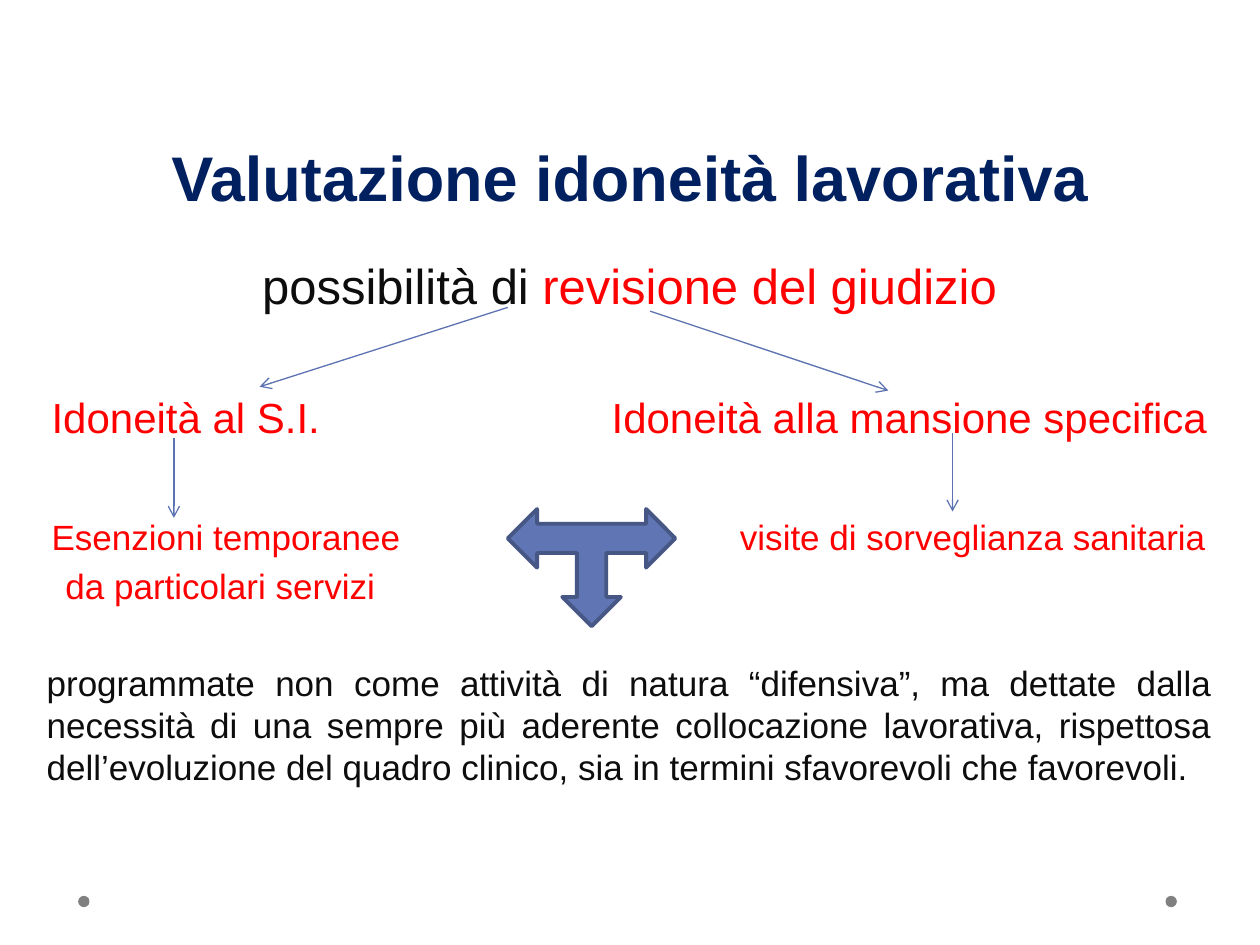
from pptx import Presentation, util as u
from pptx.dml.color import RGBColor
from pptx.enum import shapes, text
from pptx.oxml.ns import qn
from lxml import etree

NAVY = RGBColor(0x00, 0x20, 0x60)
RED = RGBColor(0xFF, 0x00, 0x00)
INK = RGBColor(0x0D, 0x0D, 0x0D)
GRAY = RGBColor(0x80, 0x80, 0x80)
BLUE = RGBColor(0x60, 0x76, 0xB4)
LINE = RGBColor(0x5C, 0x72, 0xB2)
EDGE = RGBColor(0x47, 0x57, 0x85)
ALIGN = text.PP_ALIGN

deck = Presentation()
deck.slide_width, deck.slide_height = u.Inches(10), u.Inches(7.5)
slide = deck.slides.add_slide(deck.slide_layouts[5])
items = slide.shapes


def grid(*vals):
    """Turn grid steps into lengths: 100 columns by 75 rows."""
    return [round(val * deck.slide_width / 100) for val in vals]


def write(box, paras, size, align=ALIGN.LEFT, bold=False, pitch=None,
          inset=0, indent=0, anchor=text.MSO_ANCHOR.TOP):
    """Fill a box; each paragraph is a list of (words, color) runs.

    The indent applies to every paragraph after the first.
    """
    frame = box.text_frame
    frame.word_wrap = True
    frame.auto_size = text.MSO_AUTO_SIZE.NONE
    frame.vertical_anchor = anchor
    frame.margin_left = frame.margin_right = inset
    frame.margin_top = frame.margin_bottom = inset
    for i, runs in enumerate(paras):
        para = frame.add_paragraph() if i else frame.paragraphs[0]
        para.alignment = align
        if pitch:
            para.line_spacing = u.Pt(pitch)
        if i:
            para.space_before = u.Pt(4)
            para._p.get_or_add_pPr().set("marL", str(indent))
        for words, color in runs:
            run = para.add_run()
            run.text = words
            font = run.font
            font.name, font.size, font.bold = "Arial", u.Pt(size), bold
            font.color.rgb = color


# Title
title = items.title
title.left, title.top, title.width, title.height = grid(5, 5.2, 90, 12.3)
write(title, [[("Valutazione idoneità lavorativa", NAVY)]], 36, ALIGN.CENTER,
      bold=True, pitch=58, inset=u.Inches(0.05), anchor=text.MSO_ANCHOR.BOTTOM)

# Text blocks: place on the grid, paragraphs, format
blocks = [
    ((3.7, 20.3, 92.5, 4.6),
     [[("possibilità di ", INK), ("revisione del giudizio", RED)]],
     dict(size=28, align=ALIGN.CENTER)),
    ((4.1, 31.1, 35, 4), [[("Idoneità al S.I.", RED)]], dict(size=24)),
    ((45.8, 31.1, 50, 4), [[("Idoneità alla mansione specifica", RED)]],
     dict(size=24, align=ALIGN.RIGHT)),
    ((4.1, 40.9, 35, 7.5),
     [[("Esenzioni temporanee", RED)], [("da particolari servizi", RED)]],
     dict(size=20, pitch=24, indent=u.Inches(0.11))),
    ((55.7, 40.9, 40, 3.5), [[("visite di sorveglianza sanitaria", RED)]],
     dict(size=20, pitch=24, align=ALIGN.RIGHT)),
    ((3.7, 52.5, 92.5, 10.5),
     [[("programmate non come attività di natura “difensiva”, ma dettate dalla "
        "necessità di una sempre più aderente collocazione lavorativa, "
        "rispettosa dell’evoluzione del quadro clinico, sia in termini "
        "sfavorevoli che favorevoli.", INK)]],
     dict(size=20, pitch=24, align=ALIGN.JUSTIFY)),
]
for place, paras, style in blocks:
    write(items.add_textbox(*grid(*place)), paras, **style)

# Arrows from each heading to what follows
for ends in [(40.3, 24.4, 20.6, 30.7), (51.6, 24.7, 70.5, 31),
             (13.8, 34.8, 13.8, 41.1), (75.6, 34.4, 75.6, 40.6)]:
    arrow = items.add_connector(shapes.MSO_CONNECTOR.STRAIGHT, *grid(*ends))
    arrow.line.color.rgb = LINE
    arrow.line.width = u.Pt(0.75)
    etree.SubElement(arrow.line._get_or_add_ln(), qn("a:tailEnd"), type="arrow")
    etree.SubElement(arrow._element.spPr, qn("a:effectLst"))

# Three-way arrow and footer dots
KIND = shapes.MSO_SHAPE
for kind, place, fill, edge, turn in [
        (KIND.LEFT_RIGHT_UP_ARROW, (40.3, 40.4, 13.3, 9.3), BLUE, EDGE, 180),
        (KIND.OVAL, (6.2, 71.1, 0.9, 0.9), GRAY, None, 0),
        (KIND.OVAL, (92.5, 71.1, 0.9, 0.9), GRAY, None, 0)]:
    shape = items.add_shape(kind, *grid(*place))
    shape.shadow.inherit = False
    shape.rotation = turn
    shape.fill.solid()
    shape.fill.fore_color.rgb = fill
    if edge:
        shape.line.color.rgb = edge
        shape.line.width = u.Pt(2.25)
    else:
        shape.line.fill.background()

deck.save("out.pptx")
